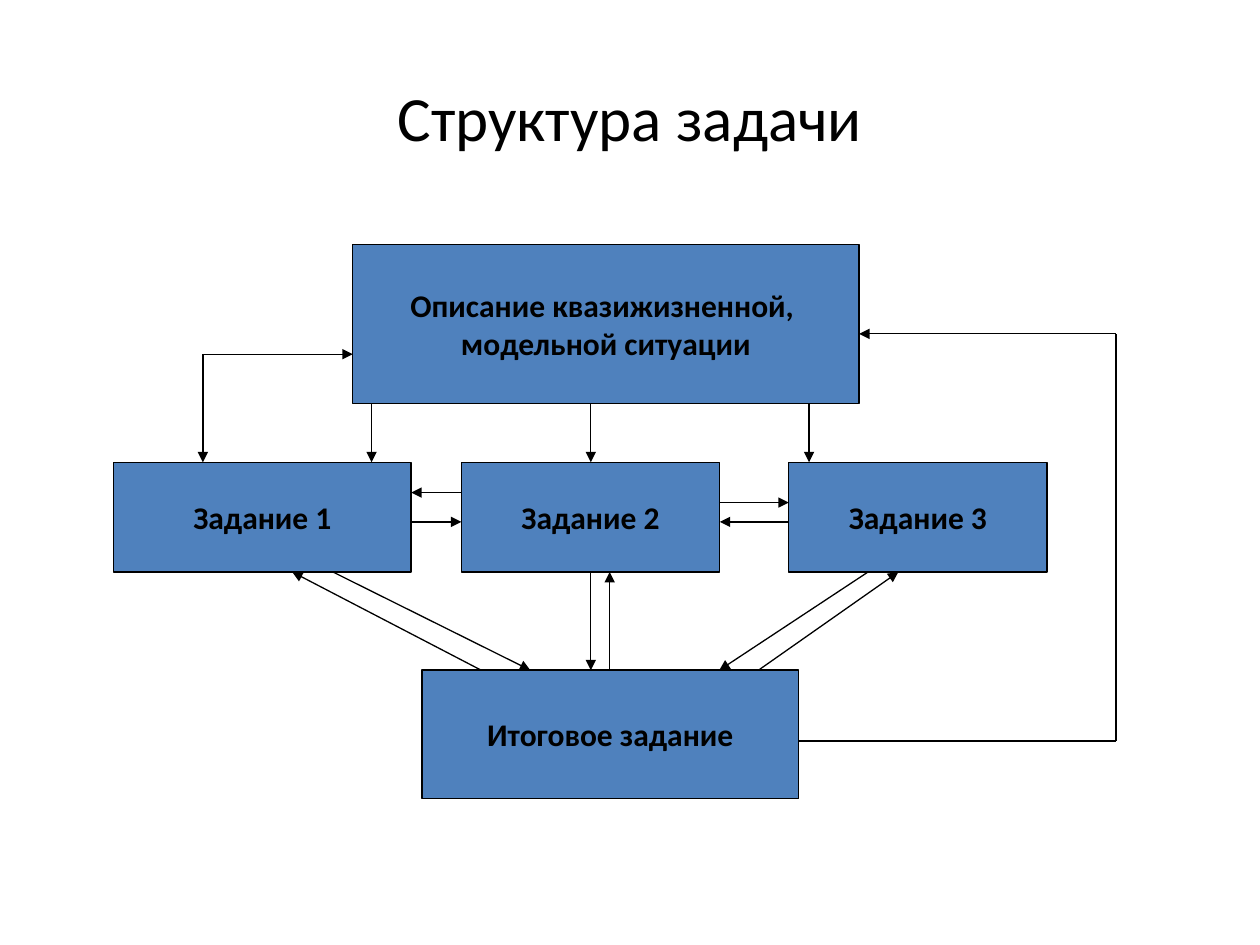
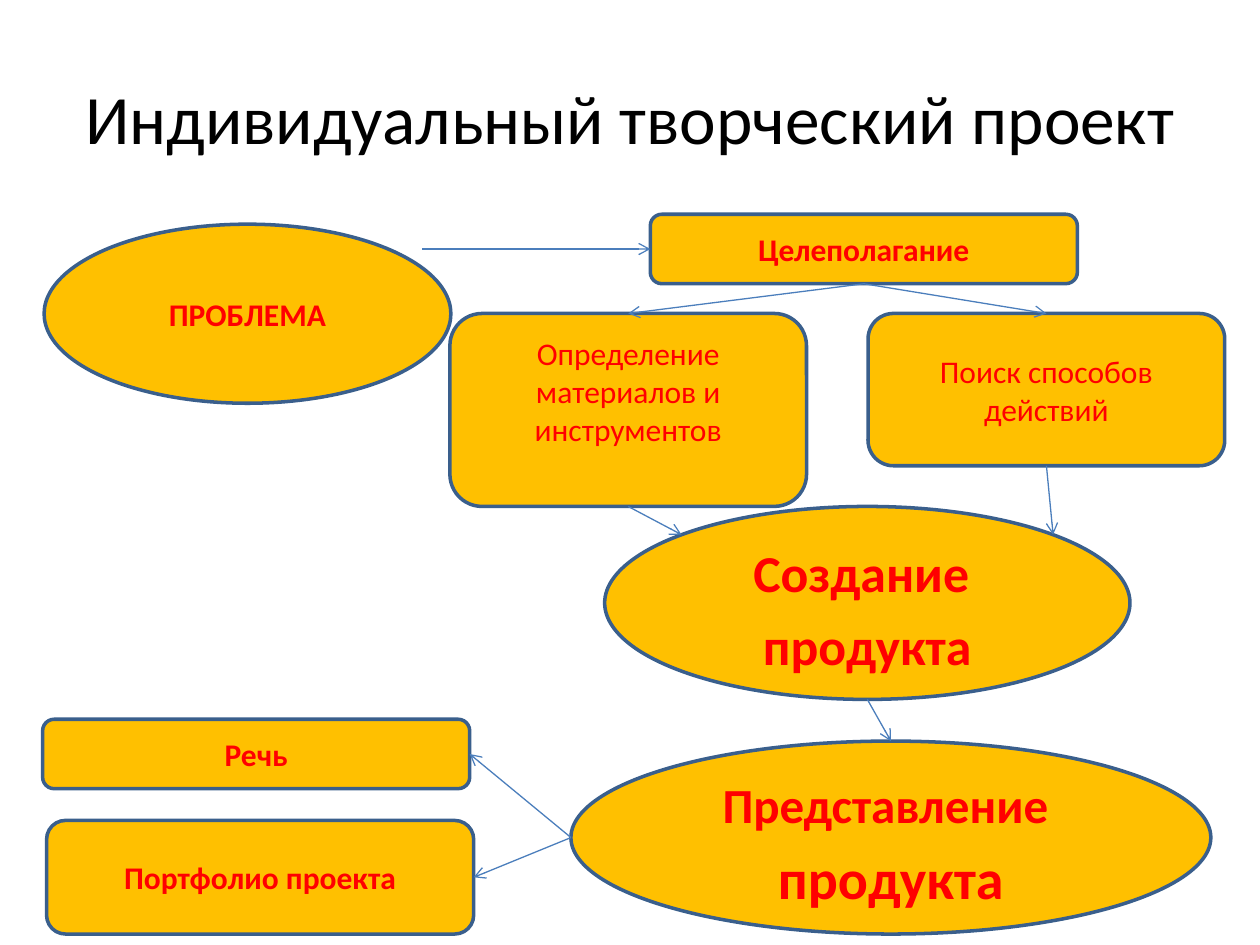
from dataclasses import dataclass
from math import sqrt
from typing import NamedTuple

from lxml.etree import SubElement
from pptx import Presentation
from pptx.dml.color import RGBColor
from pptx.enum.shapes import MSO_CONNECTOR, MSO_SHAPE
from pptx.enum.text import MSO_ANCHOR, PP_ALIGN
from pptx.oxml.ns import qn
from pptx.slide import Slide
from pptx.text.text import TextFrame
from pptx.util import Cm, Pt

FONT = "Calibri"
COLOURS = {
    "text": "000000",
    "task": "4F81BD",
    "stage": "FFC000",
    "stage_text": "FF0000",
    "stage_line": "3A5F8C",
    "stage_arrow": "4B7EBC",
}
SIDE_INSET = 0.25
EDGE_INSET = 0.13


class Point(NamedTuple):
    x: float
    y: float


class BoxStyle(NamedTuple):
    fill: str
    line: str
    line_width: float
    text: str


class ArrowStyle(NamedTuple):
    colour: str
    head: str


TASK_STYLE = BoxStyle("task", "text", 0.75, "text")
STAGE_STYLE = BoxStyle("stage", "stage_line", 2, "stage_text")
TASK_ARROW = ArrowStyle("text", "triangle")
TASK_LINE = ArrowStyle("text", "none")
STAGE_ARROW = ArrowStyle("stage_arrow", "arrow")


@dataclass(frozen=True)
class Box:
    lines: tuple[str, ...]
    left: float
    top: float
    width: float
    height: float
    shape: MSO_SHAPE = MSO_SHAPE.ROUNDED_RECTANGLE
    sizes: tuple[float, ...] = (18, 18)
    bold: bool = True
    space_before: float = 0
    top_inset: float = EDGE_INSET
    bottom_inset: float = EDGE_INSET

    @property
    def right(self) -> float:
        return self.left + self.width

    @property
    def bottom(self) -> float:
        return self.top + self.height

    def at(self, across: float, down: float) -> Point:
        return Point(self.left + across * self.width, self.top + down * self.height)


def colour(name: str) -> RGBColor:
    return RGBColor.from_string(COLOURS[name])


def write_lines(frame: TextFrame, lines: tuple[str, ...], sizes: tuple[float, ...],
                text_colour: str, bold: bool, space_before: float = 0) -> None:
    frame.word_wrap = True
    frame.vertical_anchor = MSO_ANCHOR.MIDDLE
    frame.margin_left = frame.margin_right = Cm(SIDE_INSET)
    for index, (line, size) in enumerate(zip(lines, sizes)):
        para = frame.add_paragraph() if index else frame.paragraphs[0]
        para.text = line
        para.alignment = PP_ALIGN.CENTER
        if index and space_before:
            para.space_before = Pt(space_before)
        for span in para.runs:
            span.font.name = FONT
            span.font.size = Pt(size)
            span.font.bold = bold
            span.font.color.rgb = colour(text_colour)


def add_title(page: Slide, title: str, size: float) -> None:
    title_box = page.shapes.add_textbox(Cm(1.27), Cm(0.76), Cm(22.86), Cm(3.18))
    write_lines(title_box.text_frame, (title,), (size,), "text", False)


def add_box(page: Slide, box: Box, style: BoxStyle) -> None:
    shape = page.shapes.add_shape(
        box.shape, Cm(box.left), Cm(box.top), Cm(box.width), Cm(box.height))
    shape.shadow.inherit = False
    shape.fill.solid()
    shape.fill.fore_color.rgb = colour(style.fill)
    shape.line.color.rgb = colour(style.line)
    shape.line.width = Pt(style.line_width)
    frame = shape.text_frame
    frame.margin_top = Cm(box.top_inset)
    frame.margin_bottom = Cm(box.bottom_inset)
    write_lines(frame, box.lines, box.sizes, style.text, box.bold, box.space_before)


def add_arrow(page: Slide, start: Point, end: Point, style: ArrowStyle) -> None:
    arrow = page.shapes.add_connector(
        MSO_CONNECTOR.STRAIGHT, Cm(start.x), Cm(start.y), Cm(end.x), Cm(end.y))
    arrow.line.color.rgb = colour(style.colour)
    arrow.line.width = Pt(0.75)
    SubElement(arrow.line._get_or_add_ln(), qn("a:tailEnd"), type=style.head)
    SubElement(arrow._element.spPr, qn("a:effectLst"))


def draw_task_structure(page: Slide) -> None:
    add_title(page, "Структура задачи", 36)
    rectangle = MSO_SHAPE.RECTANGLE
    situation = Box(("Описание квазижизненной, ", "модельной ситуации"),
                    7.11, 4.93, 10.21, 3.2, rectangle)
    tasks = [
        Box((f"Задание {number}",), left, 9.32, width, 2.21, rectangle)
        for number, (left, width) in enumerate(((2.29, 6), (9.3, 5.21), (15.9, 5.21)), 1)
    ]
    final = Box(("Итоговое задание",), 8.51, 13.51, 7.59, 2.59, rectangle)
    for box in (situation, *tasks, final):
        add_box(page, box, TASK_STYLE)

    first, second, third = tasks
    for x in (7.49, 11.91, 16.31):
        add_arrow(page, Point(x, situation.bottom), Point(x, first.top), TASK_ARROW)
    for task_x, final_x in ((6.71, 10.69), (11.91, 11.91), (17.5, 14.5)):
        add_arrow(page, Point(task_x, first.bottom), Point(final_x, final.top), TASK_ARROW)
    for final_x, task_x in ((9.7, 5.89), (12.29, 12.29), (15.29, 18.11)):
        add_arrow(page, Point(final_x, final.top), Point(task_x, first.bottom), TASK_ARROW)
    for before, after, forward_y, back_y in (
            (first, second, 10.52, 9.93), (second, third, 10.13, 10.52)):
        add_arrow(page, Point(before.right, forward_y), Point(after.left, forward_y), TASK_ARROW)
        add_arrow(page, Point(after.left, back_y), Point(before.right, back_y), TASK_ARROW)

    left_corner = Point(4.09, 7.14)
    add_arrow(page, left_corner, Point(left_corner.x, first.top), TASK_ARROW)
    add_arrow(page, left_corner, Point(situation.left, left_corner.y), TASK_ARROW)
    lower_corner, upper_corner = Point(22.5, 14.94), Point(22.5, 6.73)
    add_arrow(page, Point(final.right, lower_corner.y), lower_corner, TASK_LINE)
    add_arrow(page, lower_corner, upper_corner, TASK_LINE)
    add_arrow(page, upper_corner, Point(situation.right, upper_corner.y), TASK_ARROW)


def draw_creative_project(page: Slide) -> None:
    add_title(page, "Индивидуальный творческий проект", 39.6)
    oval = MSO_SHAPE.OVAL
    problem = Box(("ПРОБЛЕМА",), 0.89, 4.52, 8.2, 3.61, oval)
    goal = Box(("Целеполагание",), 13.11, 4.32, 8.61, 1.4)
    materials = Box(("Определение материалов и инструментов",), 9.07, 6.32, 7.19, 3.89,
                    bold=False, bottom_inset=0.9)
    methods = Box(("Поиск способов действий",), 17.5, 6.32, 7.19, 3.07, bold=False)
    creation = Box(("Создание ", "продукта"), 12.19, 10.21, 10.59, 3.89, oval,
                   (29.6, 29.6), space_before=6, top_inset=0.34)
    presentation = Box(("Представление ", "продукта"), 11.51, 14.94, 12.9, 3.89, oval,
                       (28, 32), space_before=6, top_inset=0.34)
    speech = Box(("Речь",), 0.86, 14.5, 8.61, 1.4)
    portfolio = Box(("Портфолио проекта",), 0.94, 16.54, 8.61, 2.29)
    for box in (problem, goal, materials, methods, creation, presentation, speech, portfolio):
        add_box(page, box, STAGE_STYLE)

    near = (1 - sqrt(0.5)) / 2
    goal_left = goal.at(0, 0.5)
    routes = (
        (Point(8.51, goal_left.y), goal_left),
        (goal.at(0.5, 1), materials.at(0.5, 0)),
        (goal.at(0.5, 1), methods.at(0.5, 0)),
        (methods.at(0.5, 1), creation.at(1 - near, near)),
        (materials.at(0.5, 1), creation.at(near, near)),
        (creation.at(0.5, 1), presentation.at(0.5, 0)),
        (presentation.at(0, 0.5), speech.at(1, 0.5)),
        (presentation.at(0, 0.5), portfolio.at(1, 0.5)),
    )
    for start, end in routes:
        add_arrow(page, start, end, STAGE_ARROW)


def main() -> None:
    deck = Presentation()
    deck.slide_width = Cm(25.4)
    deck.slide_height = Cm(19.05)
    for draw in (draw_task_structure, draw_creative_project):
        draw(deck.slides.add_slide(deck.slide_layouts[6]))
    deck.save("out.pptx")


if __name__ == "__main__":
    main()
